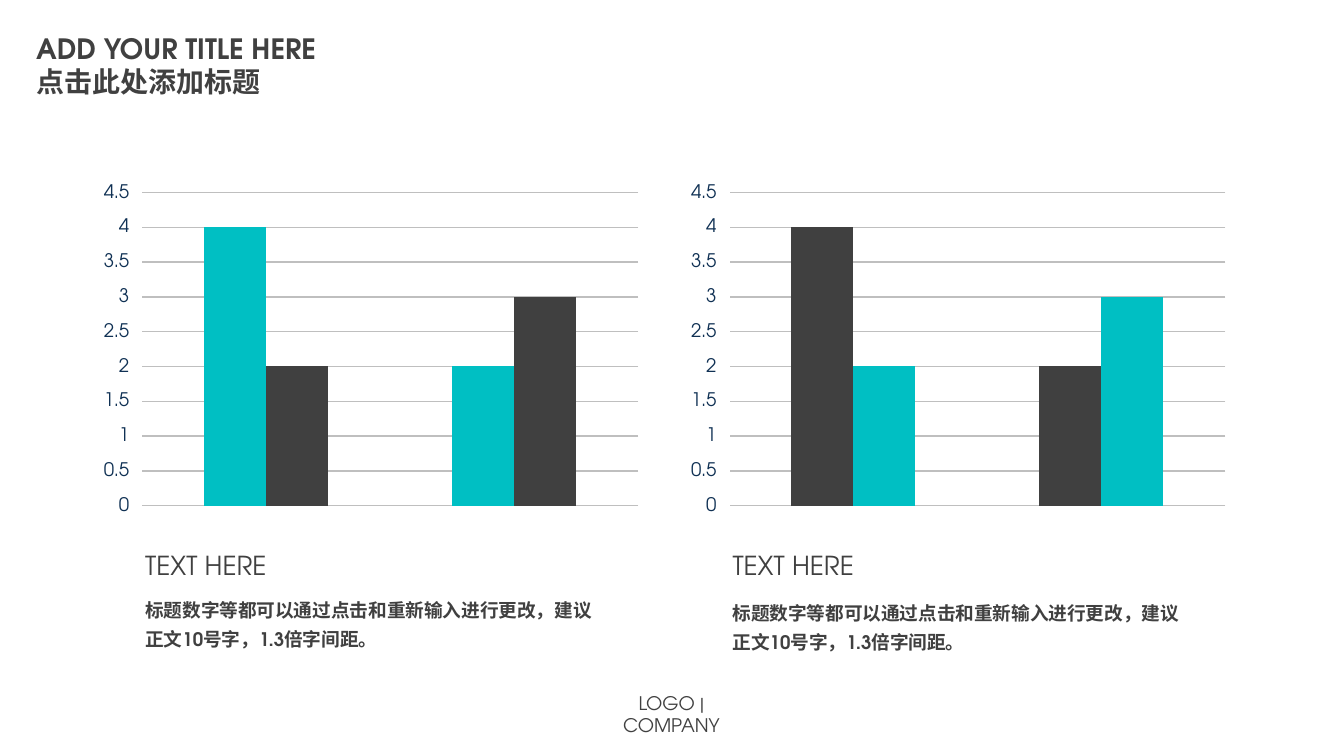
from dataclasses import dataclass

from lxml import etree
from pptx import Presentation
from pptx import util as u
from pptx.chart import data as chart_data
from pptx.dml.color import RGBColor
from pptx.enum import chart as ec
from pptx.enum import text as et
from pptx.oxml import ns


@dataclass(frozen=True)
class Theme:
    font: str = "TeX Gyre Adventor"
    dark: RGBColor = RGBColor(0x40, 0x40, 0x40)
    teal: RGBColor = RGBColor(0x00, 0xBF, 0xC3)
    navy: RGBColor = RGBColor(0x10, 0x31, 0x54)
    grid: RGBColor = RGBColor(0xBF, 0xBF, 0xBF)
    title_size: int = 15
    heading_size: int = 14
    body_size: int = 10


@dataclass(frozen=True)
class Box:
    """A place on the slide, in centimetres."""
    left: float
    top: float
    width: float
    height: float

    def lengths(self) -> list:
        return [u.Cm(value) for value in (self.left, self.top, self.width, self.height)]


@dataclass(frozen=True)
class Panel:
    """A chart with its heading and description below."""
    left: float
    body_top: float
    colors: tuple
    heading_index: int
    body_index: int


THEME = Theme()
PANELS = (
    Panel(1.75, 11.07, (THEME.teal, THEME.dark), 1, 2),
    Panel(12.85, 11.12, (THEME.dark, THEME.teal), 3, 4),
)
TEXT_INDENT = 0.74
SERIES = {"Series 1": (4, 2), "Series 2": (2, 3)}
DESCRIPTION = "标题数字等都可以通过点击和重新输入进行更改，建议正文10号字，1.3倍字间距。"


def apply(target, values: dict) -> None:
    for name, value in values.items():
        setattr(target, name, value)


def style_font(font, size: int, color: RGBColor, bold: bool = False) -> None:
    apply(font, {"name": THEME.font, "size": u.Pt(size), "bold": bold})
    font.color.rgb = color


def write_text(shape, box: Box, lines: list, size: int, bold: bool = False,
               align=et.PP_ALIGN.LEFT, spacing: float = 1.0) -> None:
    """Place a shape and fill it with one paragraph per line."""
    apply(shape, dict(zip(("left", "top", "width", "height"), box.lengths())))
    frame = shape.text_frame
    frame.text = "\n".join(lines)
    apply(frame, {"word_wrap": True, "auto_size": et.MSO_AUTO_SIZE.NONE,
                  "vertical_anchor": et.MSO_ANCHOR.TOP})
    for paragraph in frame.paragraphs:
        apply(paragraph, {"alignment": align, "line_spacing": spacing,
                          "space_before": u.Pt(0)})
        # Plain text: no bullet and no hanging indent
        properties = paragraph._p.get_or_add_pPr()
        properties.set("marL", "0")
        properties.set("indent", "0")
        etree.SubElement(properties, ns.qn("a:buNone"))
        for run in paragraph.runs:
            style_font(run.font, size, THEME.dark, bold)


def add_column_chart(slide, box: Box, colors: tuple) -> None:
    data = chart_data.CategoryChartData()
    data.categories = ["1", "2"]
    for name, values in SERIES.items():
        data.add_series(name, values)
    chart = slide.shapes.add_chart(
        ec.XL_CHART_TYPE.COLUMN_CLUSTERED, *box.lengths(), data).chart
    apply(chart, {"has_legend": False, "has_title": False})
    style_font(chart.font, THEME.body_size, THEME.navy)

    # Columns
    plot = chart.plots[0]
    apply(plot, {"gap_width": 200, "overlap": 0, "vary_by_categories": False})
    for series, color in zip(plot.series, colors):
        series.format.fill.solid()
        series.format.fill.fore_color.rgb = color

    # Axes
    chart.category_axis.visible = False
    axis = chart.value_axis
    apply(axis, {"minimum_scale": 0, "maximum_scale": 4.5, "major_unit": 0.5,
                 "has_major_gridlines": True,
                 "major_tick_mark": ec.XL_TICK_MARK.OUTSIDE})
    axis.format.line.fill.background()
    gridline = axis.major_gridlines.format.line
    gridline.color.rgb = THEME.grid
    gridline.width = u.Pt(0.75)


def add_panel(slide, panel: Panel) -> None:
    add_column_chart(slide, Box(panel.left, 3.35, 10.52, 6.5), panel.colors)
    text_left = panel.left + TEXT_INDENT
    placeholders = {shape.placeholder_format.idx: shape for shape in slide.placeholders}
    write_text(placeholders[panel.heading_index], Box(text_left, 10.26, 3.28, 0.84),
               ["TEXT HERE"], THEME.heading_size)
    write_text(placeholders[panel.body_index], Box(text_left, panel.body_top, 9.02, 1.35),
               [DESCRIPTION], THEME.body_size, bold=True, spacing=1.3)


def main() -> None:
    presentation = Presentation()
    apply(presentation, {"slide_width": u.Cm(25.4), "slide_height": u.Cm(14.29)})
    # Comparison layout: a title and two pairs of heading and body
    slide = presentation.slides.add_slide(presentation.slide_layouts[4])

    # Title
    write_text(slide.shapes.title, Box(0.43, 0.46, 5.97, 2.16),
               ["ADD YOUR TITLE HERE", "点击此处添加标题"], THEME.title_size, bold=True)

    # Charts with their texts
    for panel in PANELS:
        add_panel(slide, panel)

    # Footer
    footer_box = Box(10.9, 12.95, 3.58, 0.69)
    footer = slide.shapes.add_textbox(*footer_box.lengths())
    write_text(footer, footer_box, ["LOGO | COMPANY"], THEME.body_size,
               align=et.PP_ALIGN.CENTER)

    presentation.save("out.pptx")


if __name__ == "__main__":
    main()
